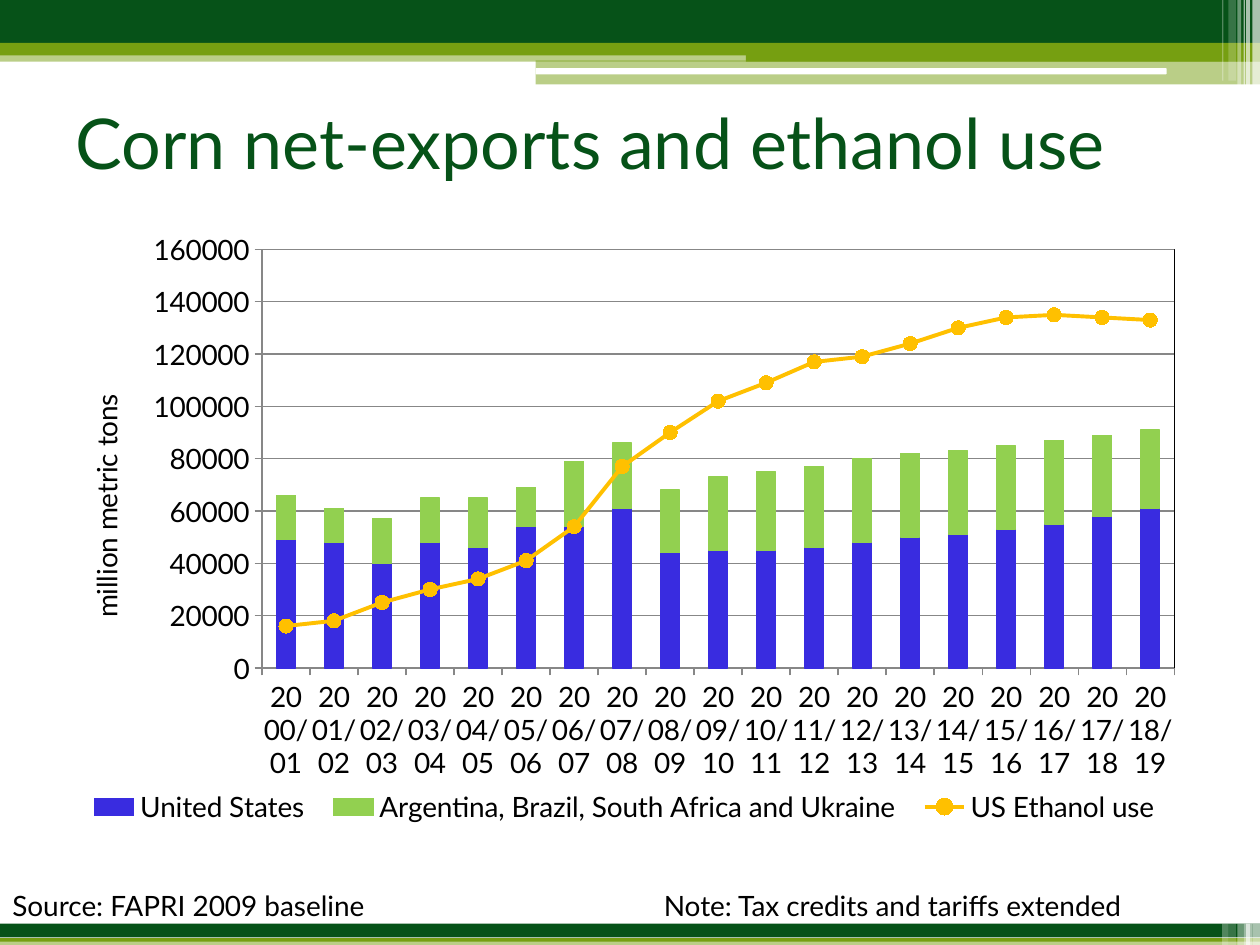
from lxml import etree
from pptx import Presentation
from pptx.chart.data import CategoryChartData
from pptx.dml.color import RGBColor
from pptx.enum.chart import XL_CHART_TYPE, XL_LEGEND_POSITION, XL_MARKER_STYLE, XL_TICK_MARK
from pptx.enum.shapes import MSO_SHAPE
from pptx.enum.text import MSO_ANCHOR, PP_ALIGN
from pptx.oxml import parse_xml
from pptx.oxml.ns import nsdecls, qn
from pptx.util import Pt

FONT = "Lato"
COLORS = {
    "dark": "065218", "olive": "769F11", "white": "FFFFFF", "text": "000000",
    "grid": "878787", "us": "392CE0", "others": "92D050", "ethanol": "FFC000",
}
SERIES = [
    ("United States", "us",
     [49, 48, 40, 48, 46, 54, 54, 61, 44, 45, 45, 46, 48, 50, 51, 53, 55, 58, 61]),
    ("Argentina, Brazil, South Africa and Ukraine", "others",
     [17, 13, 17, 17, 19, 15, 25, 25, 24, 28, 30, 31, 32, 32, 32, 32, 32, 31, 30]),
    ("US Ethanol use", "ethanol",
     [16, 18, 25, 30, 34, 41, 54, 77, 90, 102, 109, 117, 119, 124, 130, 134, 135, 134, 133]),
]
BANDS = [
    (0, 28.8, 720, 6.48, "olive", 50),
    (0, 0, 720, 24.48, "dark", 100),
    (0, 24.48, 720, 7.2, "olive", 100),
    (426.24, 28.08, 293.76, 7.2, "olive", 100),
    (306, 34.56, 414, 13.68, "olive", 50),
    (0, 537.84, 720, 2.16, "olive", 50),
    (0, 527.76, 720, 7.92, "dark", 100),
    (0, 536.04, 720, 2.16, "olive", 100),
]
STRIPES = [
    (715.68, 4.32, 4.32, 65), (712.08, 2.16, 3.6, 65), (710.64, 0.72, 3.6, 60),
    (707.04, 2.16, 3.6, 40), (702, 4.32, 4.32, 20), (698.4, 0.72, 3.6, 30),
]


def rgb(name):
    return RGBColor.from_string(COLORS[name])


def style_font(font, size, color="text"):
    font.name = FONT
    font.size = Pt(size)
    font.bold = False
    font.color.rgb = rgb(color)


def add_bar(s, x, y, w, h, color, opacity=100, kind=MSO_SHAPE.RECTANGLE):
    sp = s.shapes.add_shape(kind, Pt(x), Pt(y), Pt(w), Pt(h))
    sp.shadow.inherit = False
    sp.fill.solid()
    sp.fill.fore_color.rgb = rgb(color)
    sp.line.fill.background()
    if opacity < 100:
        clr = sp.fill._xPr.find(".//" + qn("a:srgbClr"))
        etree.SubElement(clr, qn("a:alpha"), val=str(opacity * 1000))


def add_decoration(s):
    for band in BANDS:
        add_bar(s, *band)
    add_bar(s, 306, 38.88, 360.72, 3.6, "white", kind=MSO_SHAPE.ROUNDED_RECTANGLE)
    for x, top_width, bottom_width, opacity in STRIPES:
        add_bar(s, x, 0, top_width, 48.96 if x > 705 else 46.08, "white", opacity)
        add_bar(s, x, 527.76, bottom_width, 12.24, "white", opacity)


def add_title(s, text):
    sp = s.shapes.title
    sp.left, sp.top, sp.width, sp.height = Pt(36), Pt(36), Pt(648), Pt(90)
    tf = sp.text_frame
    tf.text = text
    tf.vertical_anchor = MSO_ANCHOR.MIDDLE
    p = tf.paragraphs[0]
    p.alignment = PP_ALIGN.LEFT
    style_font(p.runs[0].font, 40, "dark")


def move_to_line(chart):
    bar = chart._chartSpace.find(".//" + qn("c:barChart"))
    ser = bar.findall(qn("c:ser"))[-1]
    line = parse_xml(
        f'<c:lineChart {nsdecls("c")}><c:grouping val="standard"/>'
        '<c:varyColors val="0"/><c:marker val="1"/></c:lineChart>')
    invert = ser.find(qn("c:invertIfNegative"))
    if invert is not None:
        ser.remove(invert)
    line.insert(2, ser)
    for ax in bar.findall(qn("c:axId")):
        etree.SubElement(line, qn("c:axId"), val=ax.get("val"))
    bar.addnext(line)


def set_layout(parent, index, box, target=""):
    old = parent.find(qn("c:layout"))
    if old is not None:
        parent.remove(old)
    sizes = "".join(f'<c:{k} val="{v}"/>' for k, v in zip("xywh", box))
    parent.insert(index, parse_xml(
        f'<c:layout {nsdecls("c")}><c:manualLayout>{target}'
        f'<c:xMode val="edge"/><c:yMode val="edge"/>{sizes}</c:manualLayout></c:layout>'))


def style_plot_area(chart):
    area = chart._chartSpace.find(".//" + qn("c:plotArea"))
    set_layout(area, 0, (0.1755, 0.0465, 0.8045, 0.671), '<c:layoutTarget val="inner"/>')
    area.append(parse_xml(
        f'<c:spPr {nsdecls("c", "a")}><a:noFill/><a:ln w="3175"><a:solidFill>'
        f'<a:srgbClr val="{COLORS["text"]}"/></a:solidFill></a:ln></c:spPr>'))


def style_axis(axis):
    axis.major_tick_mark = XL_TICK_MARK.OUTSIDE
    axis.minor_tick_mark = XL_TICK_MARK.NONE
    axis.format.line.color.rgb = rgb("grid")
    style_font(axis.tick_labels.font, 16)
    body = axis._element.find(qn("c:txPr")).find(qn("a:bodyPr"))
    body.set("rot", "0")
    body.set("vert", "horz")


def add_corn_chart(s):
    data = CategoryChartData(number_format="General")
    data.categories = [f"{year}/{(year + 1) % 100:02d}" for year in range(2000, 2019)]
    for name, _, thousands in SERIES:
        data.add_series(name, [v * 1000 for v in thousands])
    chart = s.shapes.add_chart(XL_CHART_TYPE.COLUMN_STACKED, Pt(36), Pt(126),
                               Pt(648), Pt(356.4), data).chart
    style_font(chart.font, 16)
    chart.has_title = False
    move_to_line(chart)
    style_plot_area(chart)

    bars, lines = chart.plots
    bars.gap_width = 150
    bars.overlap = 100
    bars.vary_by_categories = False
    for ser, (_, color, _) in zip(bars.series, SERIES):
        ser.format.fill.solid()
        ser.format.fill.fore_color.rgb = rgb(color)
        ser.format.line.color.rgb = rgb(color)
        ser.format.line.width = Pt(0.75)
    ethanol = lines.series[0]
    ethanol.smooth = False
    ethanol.format.line.color.rgb = rgb("ethanol")
    ethanol.format.line.width = Pt(2.25)
    ethanol.marker.style = XL_MARKER_STYLE.CIRCLE
    ethanol.marker.size = 8
    ethanol.marker.format.fill.solid()
    ethanol.marker.format.fill.fore_color.rgb = rgb("ethanol")
    ethanol.marker.format.line.color.rgb = rgb("ethanol")

    style_axis(chart.category_axis)
    axis = chart.value_axis
    style_axis(axis)
    axis.minimum_scale, axis.maximum_scale, axis.major_unit = 0, 160000, 20000
    axis.has_major_gridlines = True
    axis.major_gridlines.format.line.color.rgb = rgb("grid")
    tf = axis.axis_title.text_frame
    tf.text = "million metric tons"
    tf._txBody.find(qn("a:bodyPr")).set("rot", "-5400000")
    style_font(tf.paragraphs[0].runs[0].font, 16)

    chart.has_legend = True
    chart.legend.position = XL_LEGEND_POSITION.BOTTOM
    chart.legend.include_in_layout = False
    style_font(chart.legend.font, 16)
    set_layout(chart.legend._element, 1, (0.01, 0.9, 0.97, 0.08))


def add_footer(s, source, note):
    tf = s.shapes.add_textbox(Pt(0), Pt(504), Pt(714.24), Pt(26.64)).text_frame
    tf.word_wrap = True
    p = tf.paragraphs[0]
    p.text = f"{source}\t{note}"
    style_font(p.runs[0].font, 16)
    tabs = etree.SubElement(p._p.get_or_add_pPr(), qn("a:tabLst"))
    etree.SubElement(tabs, qn("a:tab"), pos=str(Pt(372.24)), algn="l")


def main():
    prs = Presentation()
    prs.slide_width, prs.slide_height = Pt(720), Pt(540)
    s = prs.slides.add_slide(prs.slide_layouts[5])
    add_decoration(s)
    add_title(s, "Corn net-exports and ethanol use")
    add_corn_chart(s)
    add_footer(s, "Source: FAPRI 2009 baseline", "Note: Tax credits and tariffs extended")
    prs.save("out.pptx")


if __name__ == "__main__":
    main()
